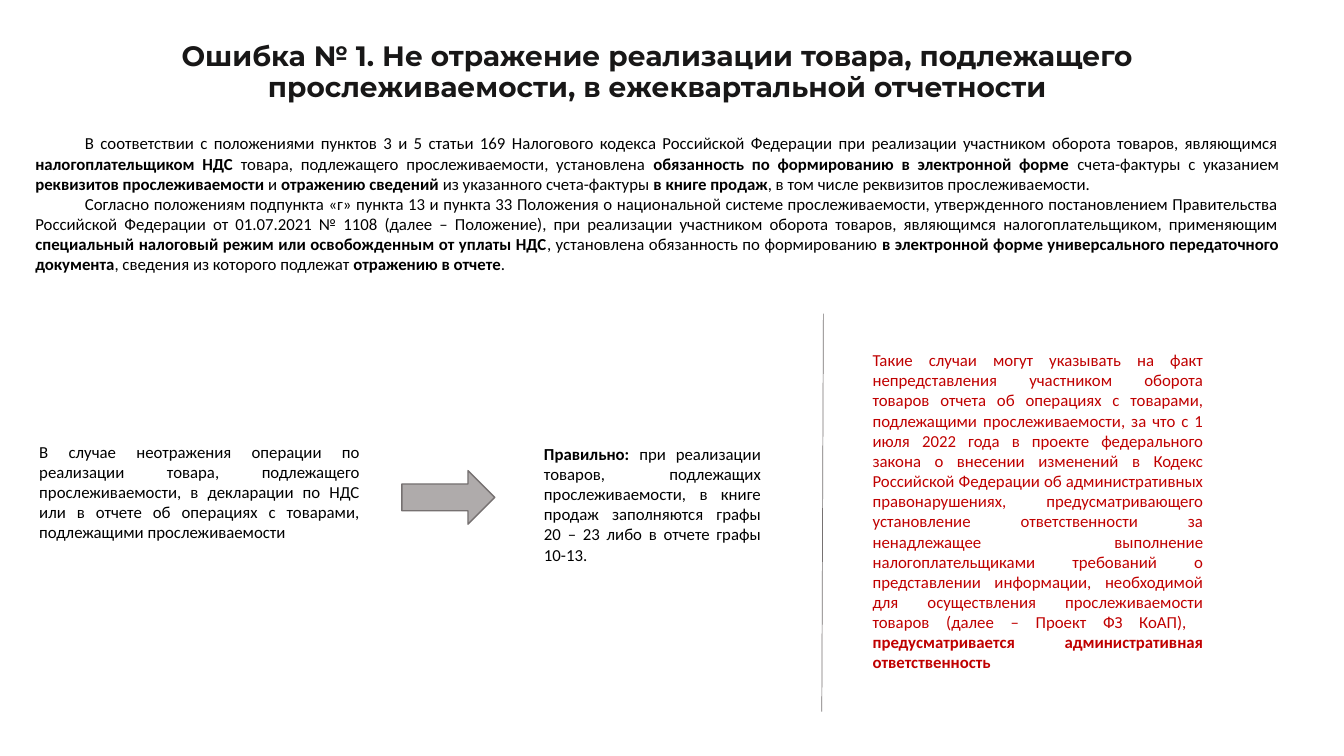
from lxml import etree
from pptx import Presentation
from pptx.dml.color import RGBColor
from pptx.enum.shapes import MSO_CONNECTOR, MSO_SHAPE
from pptx.enum.text import MSO_ANCHOR, MSO_AUTO_SIZE, PP_ALIGN
from pptx.oxml.ns import qn
from pptx.util import Cm, Pt

CENTER, JUSTIFY = PP_ALIGN.CENTER, PP_ALIGN.JUSTIFY
MIDDLE, TOP = MSO_ANCHOR.MIDDLE, MSO_ANCHOR.TOP
NO_FIT = MSO_AUTO_SIZE.NONE
FIT_SHAPE = MSO_AUTO_SIZE.SHAPE_TO_FIT_TEXT
ARROW, STRAIGHT = MSO_SHAPE.RIGHT_ARROW, MSO_CONNECTOR.STRAIGHT

BLACK = RGBColor(0x00, 0x00, 0x00)
INK = RGBColor(0x18, 0x17, 0x17)
RED = RGBColor(0xC0, 0x00, 0x00)
GRAY = RGBColor(0xAF, 0xAB, 0xAB)
DARK_GRAY = RGBColor(0x76, 0x71, 0x71)

# Content: **...** marks bold text
TITLE = ("**Ошибка № 1. Не отражение реализации товара, подлежащего "
         "прослеживаемости, в ежеквартальной отчетности**")
RULES = [
    "В соответствии с положениями пунктов 3 и 5 статьи 169 Налогового кодекса "
    "Российской Федерации при реализации участником оборота товаров, являющимся "
    "**налогоплательщиком НДС **товара, подлежащего прослеживаемости, установлена "
    "**обязанность по формированию в электронной форме **счета-фактуры с указанием "
    "**реквизитов прослеживаемости** и **отражению сведений **из указанного "
    "счета-фактуры **в книге продаж**, в том числе реквизитов прослеживаемости.",
    "Согласно положениям подпункта «г» пункта 13 и пункта 33 Положения о национальной "
    "системе прослеживаемости, утвержденного постановлением Правительства Российской "
    "Федерации от 01.07.2021 № 1108 (далее – Положение), при реализации участником "
    "оборота товаров, являющимся налогоплательщиком, применяющим **специальный "
    "налоговый режим или освобожденным от уплаты НДС**, установлена обязанность по "
    "формированию **в электронной форме универсального передаточного документа**, "
    "сведения из которого подлежат **отражению в отчете**.",
]
MISTAKE = ("В случае неотражения операции по реализации товара, подлежащего "
           "прослеживаемости, в декларации по НДС или в отчете об операциях с "
           "товарами, подлежащими прослеживаемости")
CORRECT = ("**Правильно: **при реализации товаров, подлежащих прослеживаемости, в книге "
           "продаж заполняются графы 20 – 23 либо в отчете графы 10-13.")
PENALTY = (
    "Такие случаи могут указывать на факт непредставления участником оборота товаров "
    "отчета об операциях с товарами, подлежащими прослеживаемости, за что с 1 июля "
    "2022 года в проекте федерального закона о внесении изменений в Кодекс Российской "
    "Федерации об административных правонарушениях, предусматривающего установление "
    "ответственности за ненадлежащее выполнение налогоплательщиками требований о "
    "представлении информации, необходимой для осуществления прослеживаемости товаров "
    "(далее – Проект ФЗ КоАП),  **предусматривается административная ответственность**")

# Text boxes: paragraphs, (left, top, width, height) in cm, colour, first-line indent
TEXT_BOXES = [
    (RULES, (0.64, 3.23, 31.85, 3.84), BLACK, 1.25),
    ([MISTAKE], (0.74, 11.0, 8.58, 2.82), BLACK, 0),
    ([CORRECT], (13.46, 11.05, 5.97, 3.33), BLACK, 0),
    ([PENALTY], (21.74, 8.69, 8.84, 8.46), RED, 0),
]


def cm(*values):
    return [Cm(v) for v in values]


def write(tf, paragraphs, font="Calibri", size=12, color=BLACK, align=JUSTIFY,
          anchor=TOP, fit=FIT_SHAPE, spacing=1.0, indent=0):
    tf.word_wrap = True
    tf.auto_size = fit
    tf.vertical_anchor = anchor
    for i, text in enumerate(paragraphs):
        p = tf.add_paragraph() if i else tf.paragraphs[0]
        p.alignment = align
        p.line_spacing = spacing
        if indent:
            p._p.get_or_add_pPr().set("indent", str(Cm(indent)))
        for j, part in enumerate(text.split("**")):
            if part:
                r = p.add_run()
                r.text = part
                r.font.name, r.font.size = font, Pt(size)
                r.font.bold = j % 2 == 1
                r.font.color.rgb = color


prs = Presentation()
prs.slide_width, prs.slide_height = cm(33.87, 19.05)
s = prs.slides.add_slide(prs.slide_layouts[5])

# Title
title = s.shapes.title
title.left, title.top, title.width, title.height = cm(1.96, 0, 29.21, 3.68)
write(title.text_frame, [TITLE], font="Montserrat", size=20, color=INK,
      align=CENTER, anchor=MIDDLE, fit=NO_FIT, spacing=0.9)

# Text blocks
for paragraphs, box, color, indent in TEXT_BOXES:
    tb = s.shapes.add_textbox(*cm(*box))
    write(tb.text_frame, paragraphs, color=color, indent=indent)

# Arrow from the mistake to the correct way
sp = s.shapes.add_shape(ARROW, *cm(10.13, 11.86, 2.34, 1.35))
sp.shadow.inherit = False
sp.fill.solid()
sp.fill.fore_color.rgb = GRAY
sp.line.color.rgb = DARK_GRAY
sp.line.width = Pt(1)

# Divider before the penalty
divider = s.shapes.add_connector(STRAIGHT, *cm(20.75, 7.9, 20.71, 17.93))
divider.line.color.rgb = DARK_GRAY
divider.line.width = Pt(0.5)
etree.SubElement(divider._element.spPr, qn("a:effectLst"))

prs.save("out.pptx")
